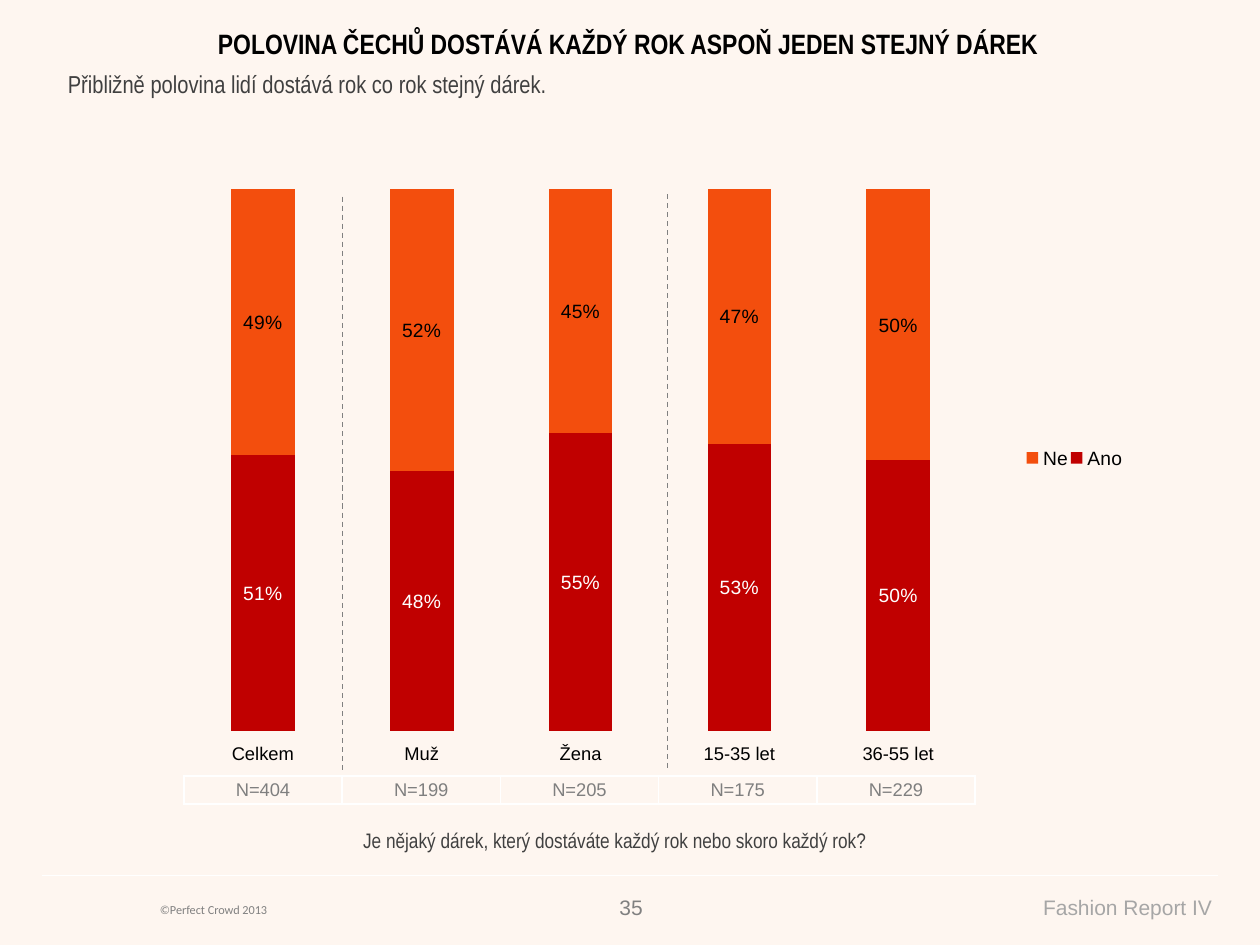
"""Build the slide on Czechs who get the same gift every year."""
from lxml.etree import SubElement
from pptx import Presentation
from pptx.chart.data import CategoryChartData
from pptx.dml.color import RGBColor
from pptx.enum.chart import XL_CHART_TYPE, XL_LABEL_POSITION, XL_LEGEND_POSITION, XL_TICK_LABEL_POSITION, XL_TICK_MARK
from pptx.enum.dml import MSO_LINE
from pptx.enum.shapes import MSO_CONNECTOR
from pptx.enum.text import MSO_ANCHOR, PP_ALIGN
from pptx.oxml import parse_xml
from pptx.oxml.ns import nsdecls, qn
from pptx.util import Inches, Pt

CREAM = RGBColor(0xFE, 0xF6, 0xF0)
WHITE = RGBColor(0xFF, 0xFF, 0xFF)
BLACK = RGBColor(0x00, 0x00, 0x00)
CHARCOAL = RGBColor(0x40, 0x40, 0x40)
GRAY = RGBColor(0x80, 0x80, 0x80)
TABLE_GRAY = RGBColor(0x7F, 0x7F, 0x7F)
LIGHT_GRAY = RGBColor(0xA6, 0xA6, 0xA6)
RED = RGBColor(0xC0, 0x00, 0x00)
ORANGE = RGBColor(0xF3, 0x4E, 0x0D)


def write_text(text_frame, text, size, color, font="Arial", align=PP_ALIGN.LEFT, bold=False):
    text_frame.word_wrap = True
    paragraph = text_frame.paragraphs[0]
    paragraph.alignment = align
    run = paragraph.add_run()
    run.text = text
    run.font.name = font
    run.font.size = Pt(size)
    run.font.bold = bold
    run.font.color.rgb = color


def add_line(shapes, start_x, start_y, end_x, end_y, color, dash=None):
    line = shapes.add_connector(
        MSO_CONNECTOR.STRAIGHT, Inches(start_x), Inches(start_y), Inches(end_x), Inches(end_y))
    line.line.color.rgb = color
    line.line.width = Pt(0.75)
    if dash:
        line.line.dash_style = dash
    SubElement(line.element.spPr, qn("a:effectLst"))


presentation = Presentation()
presentation.slide_width = Inches(10)
presentation.slide_height = Inches(7.5)
slide = presentation.slides.add_slide(presentation.slide_layouts[6])
slide.background.fill.solid()
slide.background.fill.fore_color.rgb = CREAM

add_line(slide.shapes, 0.33, 6.95, 9.67, 6.95, WHITE)

texts = [
    ("©Perfect Crowd 2013", (1.17, 7.11, 2.91, 0.22),
     dict(size=7, color=GRAY, font="Calibri")),
    ("Fashion Report IV", (6.01, 7.05, 3.71, 0.3),
     dict(size=12, color=LIGHT_GRAY, align=PP_ALIGN.RIGHT)),
    ("35", (4.79, 7.05, 0.41, 0.3),
     dict(size=12, color=GRAY, align=PP_ALIGN.RIGHT)),
    ("Je nějaký dárek, který dostáváte každý rok nebo skoro každý rok?", (0.35, 6.52, 9.06, 0.3),
     dict(size=12, color=CHARCOAL, font="Arial Narrow", align=PP_ALIGN.CENTER)),
    ("POLOVINA ČECHŮ DOSTÁVÁ KAŽDÝ ROK ASPOŇ JEDEN STEJNÝ DÁREK", (0.56, 0.16, 8.85, 0.37),
     dict(size=16, color=BLACK, font="Arial Narrow", align=PP_ALIGN.CENTER, bold=True)),
    ("Přibližně polovina lidí dostává rok co rok stejný dárek.", (0.44, 0.5, 9.34, 0.73),
     dict(size=14, color=CHARCOAL, font="Arial Narrow")),
]
for text, box, text_format in texts:
    text_box = slide.shapes.add_textbox(*map(Inches, box))
    write_text(text_box.text_frame, text, **text_format)

sample_sizes = [404, 199, 205, 175, 229]
table_frame = slide.shapes.add_table(
    1, len(sample_sizes), Inches(1.46), Inches(6.16), Inches(6.28), Inches(0.22))
table = table_frame.table
table.first_row = False
table.horz_banding = False
for cell, sample_size in zip(table.rows[0].cells, sample_sizes):
    cell.fill.background()
    cell.vertical_anchor = MSO_ANCHOR.MIDDLE
    cell.margin_left = cell.margin_right = cell.margin_top = cell.margin_bottom = 0
    write_text(cell.text_frame, f"N={sample_size}", size=10.5, color=TABLE_GRAY, align=PP_ALIGN.CENTER)

chart_data = CategoryChartData(number_format='#,##0"%"')
chart_data.categories = ["Celkem", "Muž", "Žena", "15-35 let", "36-55 let"]
chart_data.add_series("Ano", [51, 48, 55, 53, 50])
chart_data.add_series("Ne", [49, 52, 45, 47, 50])
chart = slide.shapes.add_chart(
    XL_CHART_TYPE.COLUMN_STACKED_100, Inches(1.28), Inches(1.21), Inches(8.01), Inches(5.33),
    chart_data).chart
chart.has_title = False
chart.font.name = "Arial"
chart.font.size = Pt(12)
chart.font.color.rgb = BLACK

category_axis = chart.category_axis
category_axis.tick_label_position = XL_TICK_LABEL_POSITION.LOW
category_axis.major_tick_mark = XL_TICK_MARK.OUTSIDE
category_axis.tick_labels.font.size = Pt(10.5)
category_axis.format.line.fill.background()
chart.value_axis.has_major_gridlines = False
chart.value_axis.visible = False

plot = chart.plots[0]
plot.gap_width = 150
plot.overlap = 100
plot.vary_by_categories = False
for series, fill_color, label_color in zip(plot.series, (RED, ORANGE), (WHITE, BLACK)):
    series.format.fill.solid()
    series.format.fill.fore_color.rgb = fill_color
    labels = series.data_labels
    labels.show_value = True
    labels.position = XL_LABEL_POSITION.CENTER
    labels.number_format = '#,##0"%"'
    labels.number_format_is_linked = False
    labels.font.size = Pt(11)
    labels.font.color.rgb = label_color

chart.has_legend = True
legend = chart.legend
legend.position = XL_LEGEND_POSITION.RIGHT
legend.include_in_layout = False
legend.font.size = Pt(11)

plot_area = chart.element.find(".//" + qn("c:plotArea"))
legend_element = chart.element.find(".//" + qn("c:legend"))
layouts = [
    (plot_area, 0, '<c:layoutTarget val="inner"/>', (0.022, 0.055, 0.787, 0.807)),
    (legend_element, 1, "", (0.855, 0.08, 0.1, 0.75)),
]
for parent, position, target, (left, top, width, height) in layouts:
    for old_layout in parent.findall(qn("c:layout")):
        parent.remove(old_layout)
    parent.insert(position, parse_xml(
        f'<c:layout {nsdecls("c")}><c:manualLayout>{target}'
        '<c:xMode val="edge"/><c:yMode val="edge"/>'
        f'<c:x val="{left}"/><c:y val="{top}"/><c:w val="{width}"/><c:h val="{height}"/>'
        '</c:manualLayout></c:layout>'))

for x, top, bottom in [(5.3, 1.54, 6.11), (2.72, 1.56, 6.14)]:
    add_line(slide.shapes, x, top, x, bottom, GRAY, MSO_LINE.DASH)

presentation.save("out.pptx")
